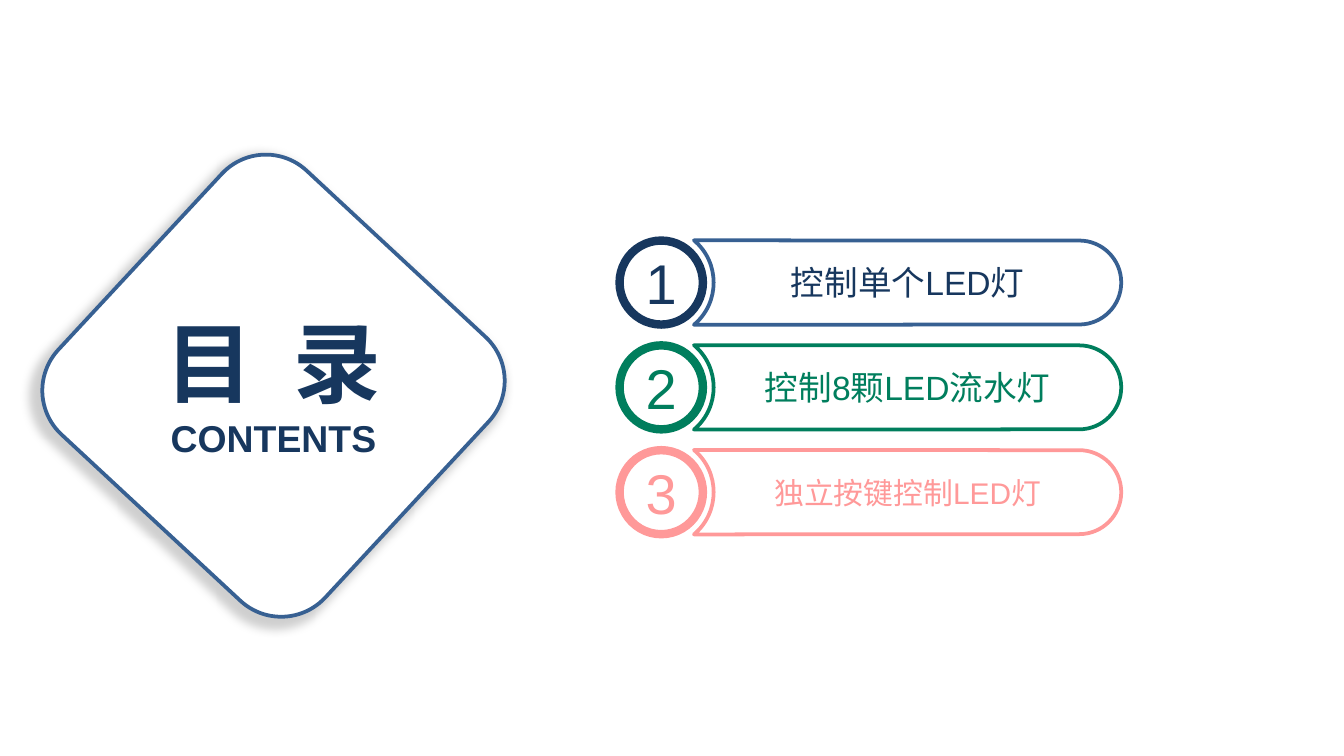
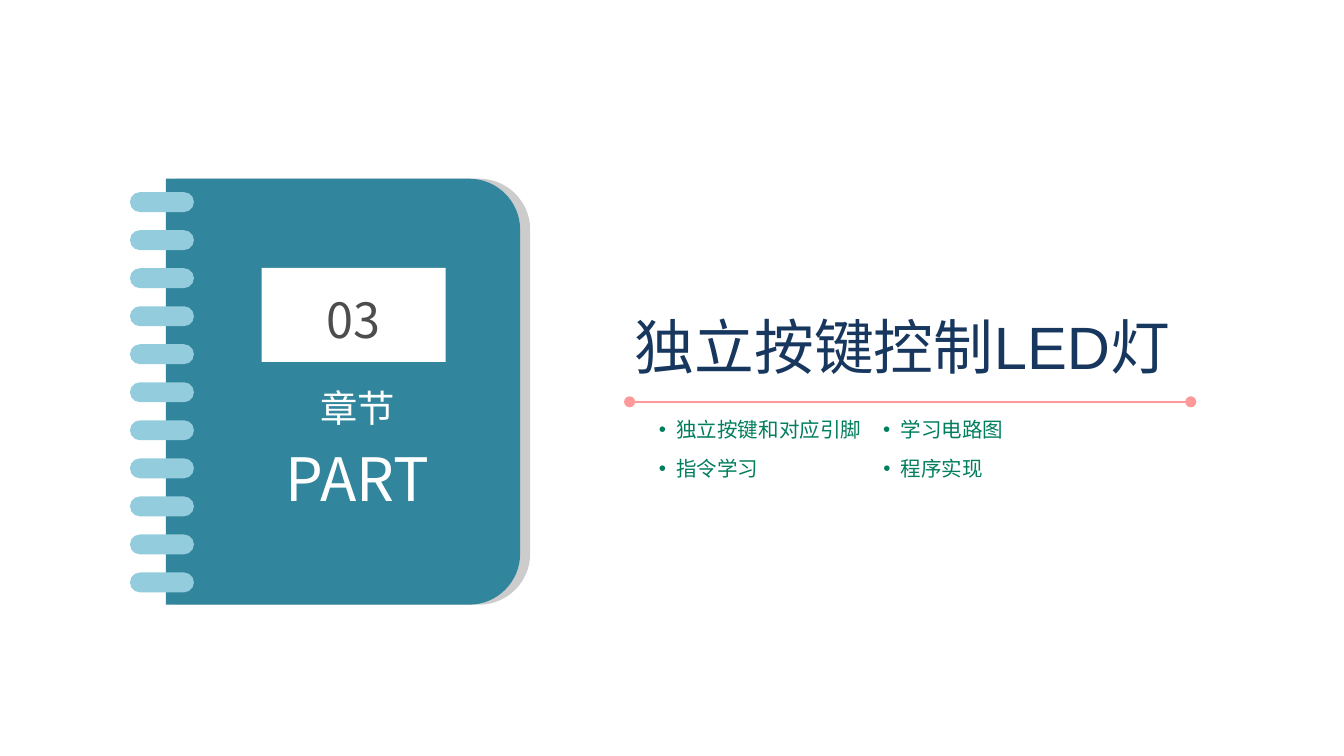
from dataclasses import dataclass
from math import cos, radians, sin, tan
from typing import Any, NamedTuple, Optional

from lxml import etree
from pptx import Presentation
from pptx.dml.color import RGBColor
from pptx.enum import shapes, text
from pptx.oxml import ns
from pptx.util import Emu, Inches, Pt

COLUMNS, ROWS = 100, 56.25
SLIDE_WIDTH = Inches(10)
CELL = SLIDE_WIDTH / COLUMNS


@dataclass(frozen=True)
class Theme:
    navy: str = "17375E"
    blue: str = "376092"
    green: str = "007E5D"
    pink: str = "FF9999"
    teal: str = "31859C"
    sky: str = "93CDDD"
    shade: str = "CCCCCC"
    grey: str = "4D4D4D"
    white: str = "FFFFFF"
    body_font: str = "Arial"
    cover_font: str = "Noto Sans CJK SC"
    contents_size: int = 47
    title_size: int = 32
    number_size: int = 30
    part_size: int = 26
    label_size: int = 20
    topic_size: int = 18
    long_topic_size: int = 16
    bullet_size: int = 11


THEME = Theme()


class Area(NamedTuple):
    left: float
    top: float
    width: float
    height: float


class Topic(NamedTuple):
    name: str
    size: int
    color: str
    outline: str


class Line(NamedTuple):
    words: str
    size: int
    color: str
    bold: bool = False
    font: str = THEME.body_font
    before: float = 0
    spacing: float = 0
    bullet: bool = False


class Arc(NamedTuple):
    x: float
    y: float
    radius: float
    start: float
    end: float

    def point(self, angle: float, pull: float = 0) -> tuple[float, float]:
        turn = radians(angle)
        return (self.x + self.radius * (cos(turn) - pull * sin(turn)),
                self.y + self.radius * (sin(turn) + pull * cos(turn)))

    def curve(self) -> list[tuple[float, float]]:
        pull = 4 / 3 * tan(radians(self.end - self.start) / 4)
        return [self.point(self.start, pull), self.point(self.end, -pull), self.point(self.end)]


TOPICS = (
    Topic("控制单个LED灯", THEME.topic_size, THEME.navy, THEME.blue),
    Topic("控制8颗LED流水灯", THEME.topic_size, THEME.green, THEME.green),
    Topic("独立按键控制LED灯", THEME.long_topic_size, THEME.pink, THEME.pink),
)
GOALS = (("独立按键和对应引脚", "学习电路图"), ("指令学习", "程序实现"))


def cells(count: float) -> Emu:
    return Emu(round(count * CELL))


def place(area: Area) -> list[Emu]:
    return [cells(length) for length in area]


def add_xml(parent: Any, tag: str, **attributes: Any) -> Any:
    child = etree.SubElement(parent, ns.qn(tag))
    for name, value in attributes.items():
        child.set(name, str(value))
    return child


def paint(shape: Any, fill: Optional[str], line: Optional[str] = None, weight: float = 0) -> Any:
    shape.shadow.inherit = False
    if fill:
        shape.fill.solid()
        shape.fill.fore_color.rgb = RGBColor.from_string(fill)
    else:
        shape.fill.background()
    if line:
        shape.line.color.rgb = RGBColor.from_string(line)
        shape.line.width = Pt(weight)
    else:
        shape.line.fill.background()
    return shape


def write(shape: Any, lines: list[Line], align: Any = text.PP_ALIGN.CENTER,
          anchor: Any = text.MSO_ANCHOR.MIDDLE, inset: tuple[float, float] = (0, 0)) -> None:
    frame = shape.text_frame
    frame.word_wrap = True
    frame.vertical_anchor = anchor
    frame.margin_left = frame.margin_right = cells(inset[0])
    frame.margin_top = frame.margin_bottom = cells(inset[1])
    for index, line in enumerate(lines):
        para = frame.add_paragraph() if index else frame.paragraphs[0]
        para.alignment = align
        if line.before:
            para.space_before = Pt(line.before)
        if line.bullet:
            settings = para._p.get_or_add_pPr()
            settings.set("marL", str(cells(1.3)))
            settings.set("indent", str(cells(-1.3)))
            add_xml(settings, "a:buFont", typeface=THEME.body_font)
            add_xml(settings, "a:buChar", char="•")
        para.font.name = line.font
        para.font.size = Pt(line.size)
        para.font.bold = line.bold
        para.font.color.rgb = RGBColor.from_string(line.color)
        span = para.add_run()
        span.text = line.words
        if line.spacing:
            span._r.get_or_add_rPr().set("spc", str(round(line.spacing * 100)))


def add_text(canvas: Any, area: Area, lines: list[Line], wrap: bool = True, **layout: Any) -> None:
    box = canvas.add_textbox(*place(area))
    write(box, lines, **layout)
    box.text_frame.word_wrap = wrap
    box.text_frame.auto_size = text.MSO_AUTO_SIZE.SHAPE_TO_FIT_TEXT


def add_outline(canvas: Any, arcs: list[Arc]) -> Any:
    corners = [(cells(x), cells(y)) for arc in arcs
               for x, y in (arc.point(arc.start), arc.point(arc.end))]
    builder = canvas.build_freeform(*corners[0], scale=1.0)
    builder.add_line_segments(corners[1:], close=True)
    shape = builder.convert_to_shape()
    segments = list(shape._element.iter(ns.qn("a:lnTo")))
    for arc, segment in zip(arcs, segments[::2]):
        segment.tag
        bend = etree.Element(ns.qn("a:cubicBezTo"))
        for x, y in arc.curve():
            add_xml(bend, "a:pt", x=cells(x) - shape.left, y=cells(y) - shape.top)
        segment.getparent().replace(segment, bend)
    return shape


def add_diamond(canvas: Any) -> None:
    diamond = canvas.add_shape(shapes.MSO_SHAPE.ROUNDED_RECTANGLE, *place(Area(6.8, 15.3, 27.1, 26.8)))
    paint(diamond, THEME.white, THEME.blue, 2)
    diamond.rotation = 42.9
    effects = diamond._element.spPr.find(ns.qn("a:effectLst"))
    shadow = add_xml(effects, "a:outerShdw", blurRad=Pt(5), dist=0, dir=0,
                     sx=102000, sy=102000, algn="tr", rotWithShape=0)
    add_xml(add_xml(shadow, "a:srgbClr", val="000000"), "a:alpha", val=18000)


def add_topic(canvas: Any, number: int, topic: Topic) -> None:
    height = 6.25
    top = 17.9 + 7.8 * (number - 1)
    middle = top + height / 2
    outline = [Arc(80.3, middle, height / 2, -90, 0), Arc(80.3, middle, height / 2, 0, 90),
               Arc(49, middle, 4.1, 50, -50)]
    pill = paint(add_outline(canvas, outline), None, topic.outline, 2)
    write(pill, [Line(topic.name, topic.size, topic.color)])
    badge = canvas.add_shape(shapes.MSO_SHAPE.OVAL, *place(Area(46.1, top, 6.2, height)))
    paint(badge, THEME.white, topic.color, 4.5)
    write(badge, [Line(str(number), THEME.number_size, topic.color)])


def add_cover(canvas: Any, left: float, color: str) -> None:
    top, bottom, radius = 13.3, 45, 3.8
    center = left + 26.35 - radius
    outline = [Arc(center, top + radius, radius, -90, 0),
               Arc(center, bottom - radius, radius, 0, 90),
               Arc(left, bottom, 0, 90, 180), Arc(left, top, 0, 180, 270)]
    paint(add_outline(canvas, outline), color)


def add_notebook(canvas: Any) -> None:
    notebook = canvas.add_group_shape().shapes
    add_cover(notebook, 13.1, THEME.shade)
    add_cover(notebook, 12.35, THEME.teal)
    label = notebook.add_shape(shapes.MSO_SHAPE.RECTANGLE, *place(Area(19.47, 19.93, 13.7, 7)))
    paint(label, THEME.white)
    for index in range(11):
        area = Area(9.67, 14.3 + 2.83 * index, 4.76, 1.48)
        ring = notebook.add_shape(shapes.MSO_SHAPE.ROUNDED_RECTANGLE, *place(area))
        ring.adjustments[0] = 0.5
        paint(ring, THEME.sky)
    add_text(notebook, Area(19.84, 21.57, 12.9, 4.4),
             [Line("03", THEME.part_size, THEME.grey, font=THEME.cover_font)],
             anchor=text.MSO_ANCHOR.TOP)
    add_text(notebook, Area(20.45, 28.65, 12.3, 9.8),
             [Line("章节", THEME.label_size, THEME.white, font=THEME.cover_font),
              Line("PART", THEME.title_size, THEME.white, font=THEME.cover_font, before=6.4)],
             anchor=text.MSO_ANCHOR.TOP)


def add_rule(canvas: Any) -> None:
    top = cells(29.9)
    rule = canvas.add_connector(shapes.MSO_CONNECTOR.STRAIGHT, cells(46.85), top, cells(88.6), top)
    rule.line.color.rgb = RGBColor.from_string(THEME.pink)
    rule.line.width = Pt(1)
    for end in ("a:headEnd", "a:tailEnd"):
        add_xml(rule.line._get_or_add_ln(), end, type="oval")
    add_xml(rule._element.spPr, "a:effectLst")


def build_contents(page: Any) -> None:
    canvas = page.shapes
    add_diamond(canvas)
    for number, topic in enumerate(TOPICS, 1):
        add_topic(canvas, number, topic)
    add_text(canvas, Area(9.2, 22.95, 22.3, 7.9),
             [Line("目 录", THEME.contents_size, THEME.navy, bold=True, spacing=5.4)])
    add_text(canvas, Area(9.3, 30.9, 22.1, 3.4),
             [Line("CONTENTS", THEME.label_size, THEME.navy, bold=True)],
             anchor=text.MSO_ANCHOR.TOP)


def build_chapter(page: Any) -> None:
    canvas = page.shapes
    add_rule(canvas)
    add_text(canvas, Area(45, 23.05, 44.3, 5.4),
             [Line(TOPICS[2].name, THEME.title_size, THEME.navy)], anchor=text.MSO_ANCHOR.TOP)
    for row, goals in enumerate(GOALS):
        for column, goal in enumerate(goals):
            area = Area(48.3 + 16.7 * column, 30.65 + 2.9 * row, 2.9 + 1.53 * len(goal), 2.6)
            add_text(canvas, area, [Line(goal, THEME.bullet_size, THEME.green, bullet=True)],
                     wrap=False, align=text.PP_ALIGN.LEFT, anchor=text.MSO_ANCHOR.TOP,
                     inset=(0.72, 0.36))
    add_notebook(canvas)


def main() -> None:
    deck = Presentation()
    deck.slide_width = SLIDE_WIDTH
    deck.slide_height = cells(ROWS)
    for build in (build_contents, build_chapter):
        build(deck.slides.add_slide(deck.slide_layouts[6]))
    deck.save("out.pptx")


if __name__ == "__main__":
    main()
